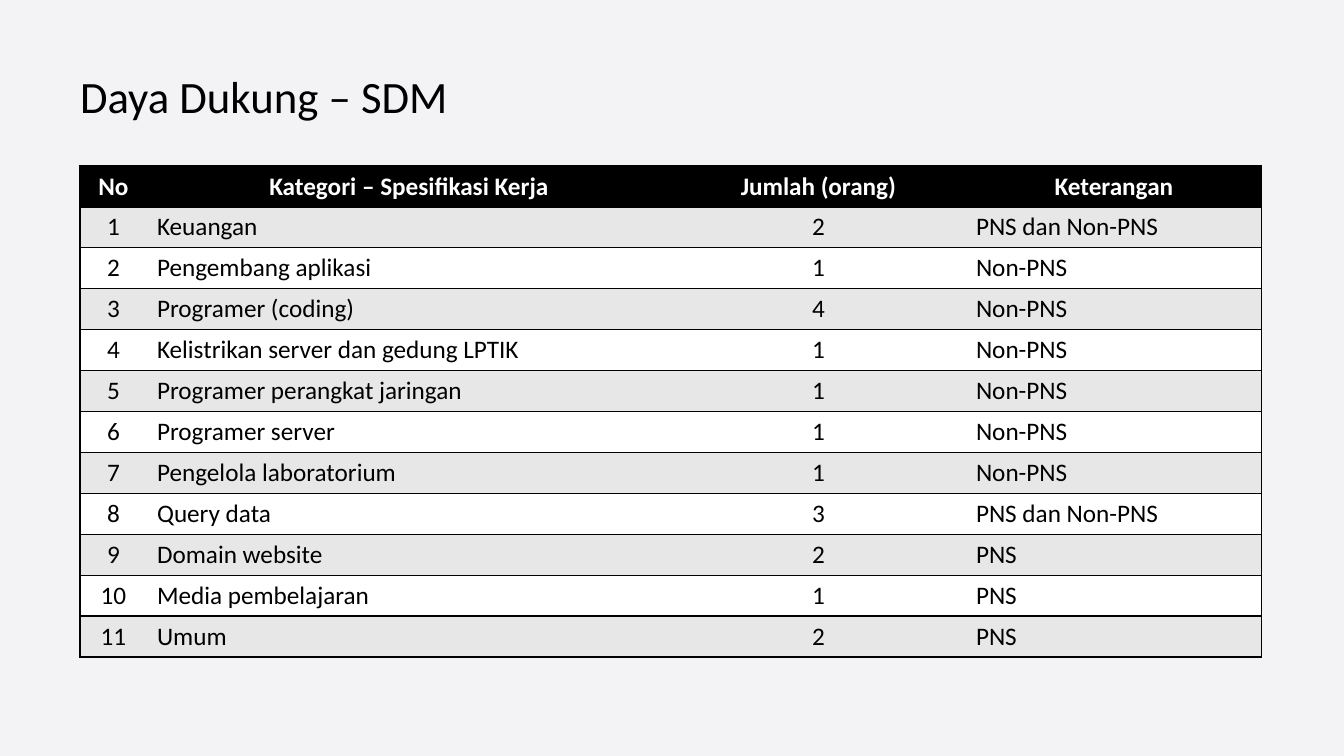
from lxml.etree import SubElement
from pptx import Presentation
from pptx.dml.color import RGBColor
from pptx.enum.text import MSO_ANCHOR, PP_ALIGN
from pptx.oxml import parse_xml
from pptx.oxml.ns import nsdecls, qn
from pptx.util import Pt

EMU_PER_PX = 914400 / 100.8
FONT = "Calibri"
BACKGROUND = RGBColor(0xF3, 0xF2, 0xF4)
BLACK = RGBColor(0x00, 0x00, 0x00)
WHITE = RGBColor(0xFF, 0xFF, 0xFF)
BAND = RGBColor(0xE7, 0xE7, 0xE7)
NO_STYLE = "{2D5ABB26-0587-4C30-8999-92F81FD0307C}"

HEADINGS = ("No", "Kategori – Spesifikasi Kerja", "Jumlah (orang)", "Keterangan")
STAFF = (
    ("Keuangan", 2, "PNS dan Non-PNS"),
    ("Pengembang aplikasi", 1, "Non-PNS"),
    ("Programer (coding)", 4, "Non-PNS"),
    ("Kelistrikan server dan gedung LPTIK", 1, "Non-PNS"),
    ("Programer perangkat jaringan", 1, "Non-PNS"),
    ("Programer server", 1, "Non-PNS"),
    ("Pengelola laboratorium", 1, "Non-PNS"),
    ("Query data", 3, "PNS dan Non-PNS"),
    ("Domain website", 2, "PNS"),
    ("Media pembelajaran", 1, "PNS"),
    ("Umum", 2, "PNS"),
)
COLUMN_WIDTHS = (67, 524, 295, 296)
CENTRED_COLUMNS = (0, 2)


def px(length):
    return round(length * EMU_PER_PX)


def set_font(paragraph, size, color, bold=False):
    font = paragraph.font
    font.name, font.size, font.bold = FONT, Pt(size), bold
    font.color.rgb = color


def add_borders(cell, sides):
    """Draw 1 pt black lines; sides are in schema order L, R, T, B."""
    properties = cell._tc.get_or_add_tcPr()
    for position, side in enumerate(sides):
        line = parse_xml(f'<a:ln{side} {nsdecls("a")} w="{Pt(1)}"/>')
        fill = SubElement(line, qn("a:solidFill"))
        SubElement(fill, qn("a:srgbClr"), val=str(BLACK))
        properties.insert(position, line)


def add_title(slide, left, top, width, height):
    title = slide.shapes.title
    title.left, title.top, title.width, title.height = map(px, (left, top, width, height))
    frame = title.text_frame
    frame.text = "Daya Dukung – SDM"
    frame.margin_left = frame.margin_right = frame.margin_top = frame.margin_bottom = 0
    frame.vertical_anchor = MSO_ANCHOR.TOP
    frame.word_wrap = True
    heading = frame.paragraphs[0]
    heading.alignment = PP_ALIGN.LEFT
    set_font(heading, 32, BLACK)


def add_staff_table(slide, left, top, width, height):
    rows = [HEADINGS] + [(number, *entry) for number, entry in enumerate(STAFF, 1)]
    frame = slide.shapes.add_table(
        len(rows), len(HEADINGS), px(left), px(top), px(width), px(height))
    table = frame.table
    table._tbl.tblPr.find(qn("a:tableStyleId")).text = NO_STYLE

    for column, column_width in zip(table.columns, COLUMN_WIDTHS):
        column.width = px(column_width)
    for row in table.rows:
        row.height = px(height / len(rows))

    # Header in black, then alternating bands
    for r, values in enumerate(rows):
        is_header = r == 0
        row_fill = BLACK if is_header else BAND if r % 2 else WHITE
        for c, value in enumerate(values):
            cell = table.cell(r, c)
            cell.text = str(value)
            cell.fill.solid()
            cell.fill.fore_color.rgb = row_fill
            entry = cell.text_frame.paragraphs[0]
            centred = is_header or c in CENTRED_COLUMNS
            entry.alignment = PP_ALIGN.CENTER if centred else PP_ALIGN.LEFT
            set_font(entry, 18, WHITE if is_header else BLACK, is_header)
            outer = "L" if c == 0 else "R" if c == len(values) - 1 else ""
            add_borders(cell, outer + "TB")


def main():
    presentation = Presentation()
    presentation.slide_width, presentation.slide_height = px(1344), px(756)
    slide = presentation.slides.add_slide(presentation.slide_layouts[5])
    slide.background.fill.solid()
    slide.background.fill.fore_color.rgb = BACKGROUND
    add_title(slide, 80, 69, 1182, 163)
    add_staff_table(slide, 80, 166, 1182, 491)
    presentation.save("out.pptx")


if __name__ == "__main__":
    main()
